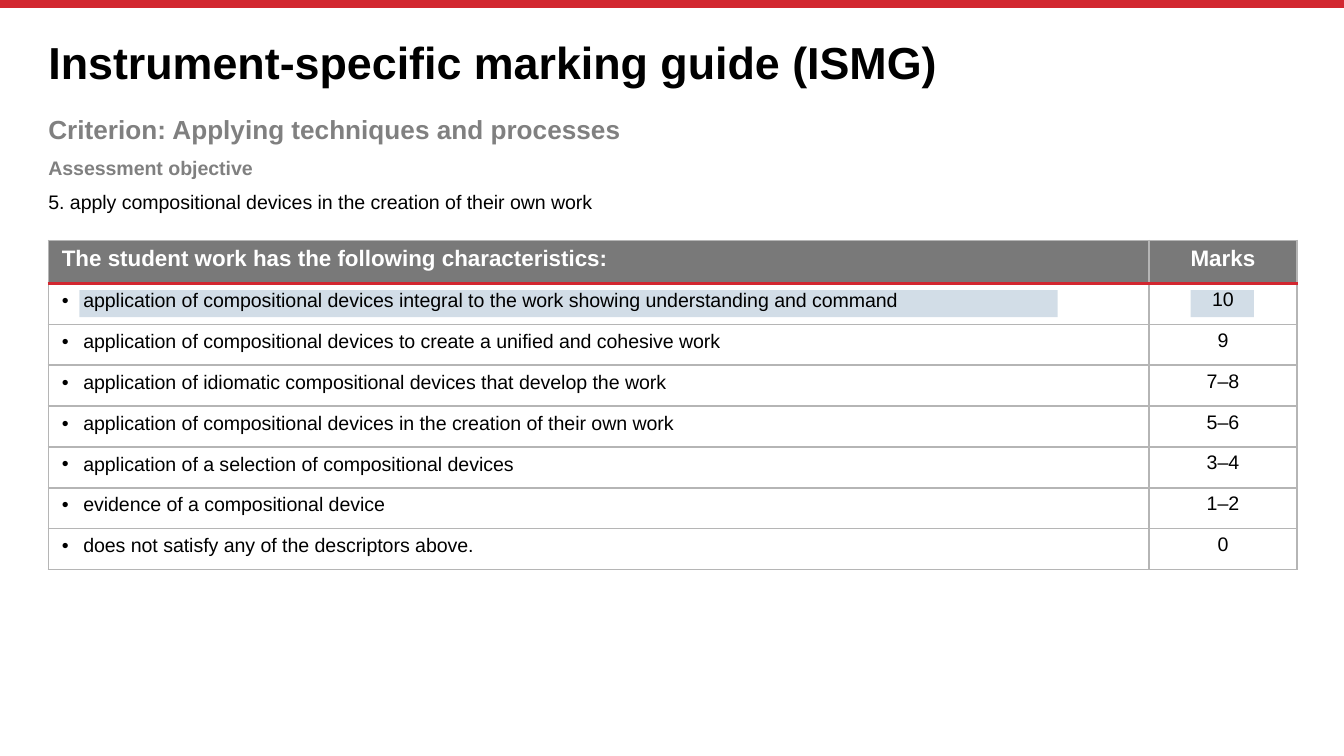
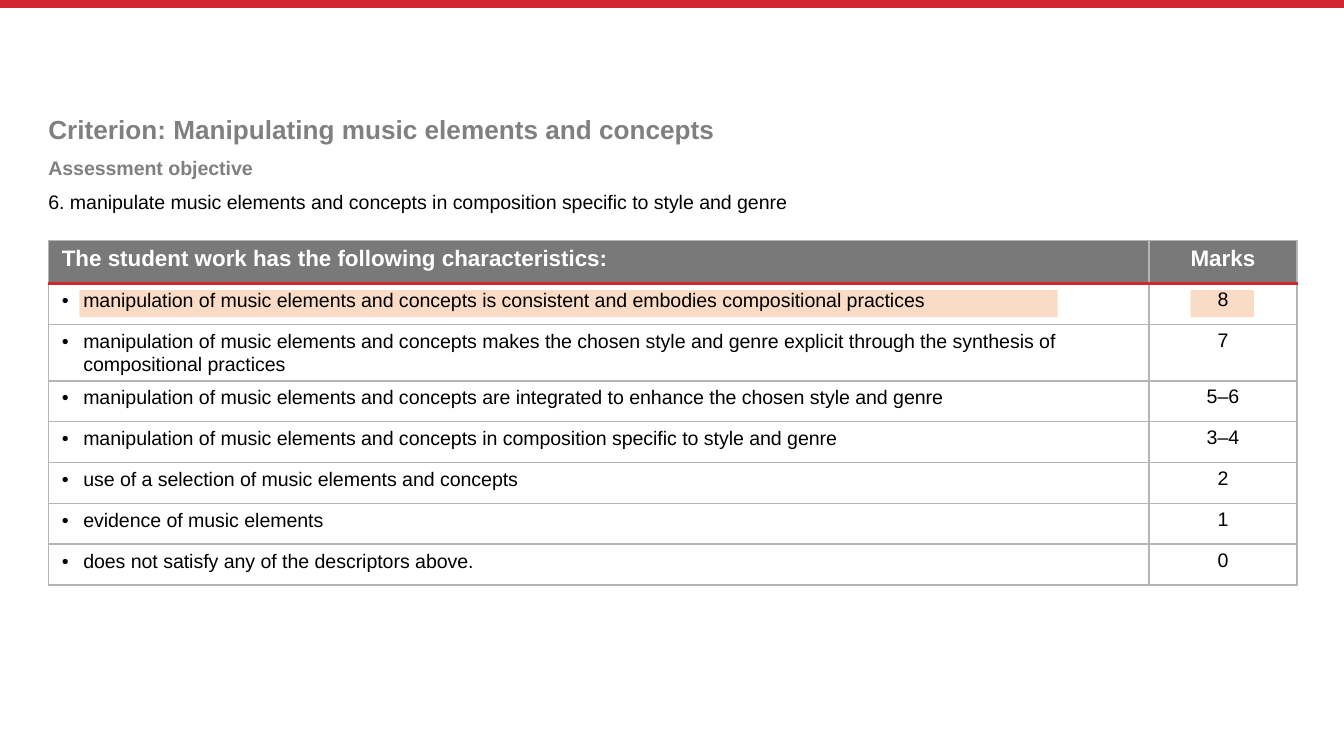
from lxml.etree import SubElement
from pptx import Presentation
from pptx.dml.color import RGBColor
from pptx.enum.shapes import MSO_CONNECTOR, MSO_SHAPE
from pptx.enum.text import MSO_ANCHOR, MSO_AUTO_SIZE, PP_ALIGN
from pptx.oxml.ns import qn
from pptx.util import Inches, Pt

COLOURS = {
    "red": "D22730",
    "blue": "21578A",
    "orange": "ED7A23",
    "black": "000000",
    "white": "FFFFFF",
    "heading": "808080",
    "header": "797979",
    "border": "B5B5B5",
}
FONT = "Arial"
PAGE_WIDTH = 10
PAGE_HEIGHT = PAGE_WIDTH * 9 / 16
LEFT, WIDTH = 0.36, 9.29
MARKS_WIDTH = 1.1
HEADER_HEIGHT = 0.32
ROW_HEIGHT = (2.45 - HEADER_HEIGHT) / 7
HANGING = 0.16
TABLE_HEADER = ("The student work has the following characteristics:", "Marks")

GUIDES = [
    {
        "title": "Instrument-specific marking guide (ISMG)",
        "criterion": "Criterion: Applying techniques and processes",
        "objective": "5. apply compositional devices in the creation of their own work",
        "highlight": ("blue", 20),
        "rows": [
            ("application of compositional devices integral to the work showing understanding and command", "10"),
            ("application of compositional devices to create a unified and cohesive work", "9"),
            ("application of idiomatic compositional devices that develop the work", "7–8"),
            ("application of compositional devices in the creation of their own work", "5–6"),
            ("application of a selection of compositional devices", "3–4"),
            ("evidence of a compositional device", "1–2"),
            ("does not satisfy any of the descriptors above.", "0"),
        ],
    },
    {
        "title": None,
        "criterion": "Criterion: Manipulating music elements and concepts",
        "objective": "6. manipulate music elements and concepts in composition specific to style and genre",
        "highlight": ("orange", 26),
        "rows": [
            ("manipulation of music elements and concepts is consistent and embodies compositional practices", "8"),
            ("manipulation of music elements and concepts makes the chosen style and genre explicit "
             "through the synthesis of compositional practices", "7"),
            ("manipulation of music elements and concepts are integrated to enhance the chosen style and genre", "5–6"),
            ("manipulation of music elements and concepts in composition specific to style and genre", "3–4"),
            ("use of a selection of music elements and concepts", "2"),
            ("evidence of music elements", "1"),
            ("does not satisfy any of the descriptors above.", "0"),
        ],
    },
]


def colour(name):
    return RGBColor.from_string(COLOURS[name])


class GuideDeck:
    def __init__(self):
        self.deck = Presentation()
        self.deck.slide_width = Inches(PAGE_WIDTH)
        self.deck.slide_height = Inches(PAGE_HEIGHT)
        self.page = None

    def add_page(self):
        self.page = self.deck.slides.add_slide(self.deck.slide_layouts[1])

    def master_band(self):
        band = self.page.shapes.add_connector(
            MSO_CONNECTOR.STRAIGHT, 0, Inches(0.03), Inches(PAGE_WIDTH), Inches(0.03))
        band.line.color.rgb = colour("red")
        band.line.width = Pt(4.2)
        SubElement(band.element.spPr, qn("a:effectLst"))
        self.deck.slide_master.shapes.element.append(band.element)

    def format_runs(self, paragraph, size, tone, bold=False):
        for span in paragraph.runs:
            span.font.name = FONT
            span.font.size = Pt(size)
            span.font.bold = bold
            span.font.color.rgb = colour(tone)

    def place(self, box, top, height):
        box.left, box.top = Inches(LEFT), Inches(top)
        box.width, box.height = Inches(WIDTH), Inches(height)
        frame = box.text_frame
        frame.margin_left = frame.margin_right = Inches(0)
        frame.margin_top = frame.margin_bottom = Inches(0)
        frame.word_wrap = True
        frame.auto_size = MSO_AUTO_SIZE.NONE
        frame.vertical_anchor = MSO_ANCHOR.TOP
        return frame

    def title(self, text):
        box = self.page.shapes.title
        if text is None:
            box.element.getparent().remove(box.element)
            return
        frame = self.place(box, 0.3, 0.39)
        frame.text = text
        para = frame.paragraphs[0]
        para.alignment = PP_ALIGN.LEFT
        para.line_spacing = 0.9
        self.format_runs(para, 24, "black", True)

    def body(self, criterion, objective):
        frame = self.place(self.page.placeholders[1], 0.84, 1.1)
        lines = [
            (criterion, 14, "heading", True),
            ("Assessment objective", 10.5, "heading", True),
            (objective, 10.5, "black", False),
        ]
        for index, (text, size, tone, bold) in enumerate(lines):
            para = frame.add_paragraph() if index else frame.paragraphs[0]
            para.text = text
            properties = para._p.get_or_add_pPr()
            properties.set("marL", "0")
            properties.set("indent", "0")
            SubElement(properties, qn("a:buNone"))
            para.space_before = Pt(6 if index else 0)
            self.format_runs(para, size, tone, bold)

    def highlight(self, left, width, tone, opacity):
        box = self.page.shapes.add_shape(
            MSO_SHAPE.RECTANGLE, Inches(left), Inches(2.16), Inches(width), Inches(0.2))
        box.shadow.inherit = False
        box.line.fill.background()
        box.fill.solid()
        box.fill.fore_color.rgb = colour(tone)
        shade = box.element.spPr.find(".//" + qn("a:srgbClr"))
        SubElement(shade, qn("a:alpha"), val=str(opacity * 1000))

    def borders(self, cell, row):
        red_side = {0: "lnB", 1: "lnT"}.get(row)
        properties = cell._tc.get_or_add_tcPr()
        for side in ("lnL", "lnR", "lnT", "lnB"):
            tone, width = ("red", 1.5) if side == red_side else ("border", 1)
            edge = SubElement(properties, qn("a:" + side), w=str(Pt(width)))
            fill = SubElement(edge, qn("a:solidFill"))
            SubElement(fill, qn("a:srgbClr"), val=COLOURS[tone])

    def bullet(self, para):
        properties = para._p.get_or_add_pPr()
        properties.set("marL", str(Inches(HANGING)))
        properties.set("indent", str(-Inches(HANGING)))
        SubElement(properties, qn("a:buFont"), typeface=FONT)
        SubElement(properties, qn("a:buChar"), char="•")
        tabs = SubElement(properties, qn("a:tabLst"))
        SubElement(tabs, qn("a:tab"), pos=str(Inches(HANGING)), algn="l")
        para.line_spacing = 1.05
        para.space_after = Pt(2)

    def cell(self, cell, row, column, text):
        self.borders(cell, row)
        cell.margin_left = cell.margin_right = Inches(0.1)
        cell.margin_top = cell.margin_bottom = Inches(0.04)
        cell.vertical_anchor = MSO_ANCHOR.TOP
        cell.text_frame.text = text
        para = cell.text_frame.paragraphs[0]
        if column:
            para.alignment = PP_ALIGN.CENTER
        elif row:
            self.bullet(para)
        if row:
            cell.fill.background()
            self.format_runs(para, 10.5, "black")
        else:
            cell.fill.solid()
            cell.fill.fore_color.rgb = colour("header")
            self.format_runs(para, 12, "white", True)

    def table(self, rows):
        content = [TABLE_HEADER, *rows]
        height = HEADER_HEIGHT + ROW_HEIGHT * len(rows)
        table = self.page.shapes.add_table(
            len(content), 2, Inches(LEFT), Inches(1.79), Inches(WIDTH), Inches(height)).table
        table.first_row = False
        table.horz_banding = False
        table.columns[0].width = Inches(WIDTH - MARKS_WIDTH)
        table.columns[1].width = Inches(MARKS_WIDTH)
        for row, texts in enumerate(content):
            table.rows[row].height = Inches(ROW_HEIGHT if row else HEADER_HEIGHT)
            for column, text in enumerate(texts):
                self.cell(table.cell(row, column), row, column, text)


def main():
    style = GuideDeck()
    for number, guide in enumerate(GUIDES):
        style.add_page()
        if number == 0:
            style.master_band()
        style.title(guide["title"])
        style.body(guide["criterion"], guide["objective"])
        for left, width in ((8.86, 0.47), (0.59, 7.28)):
            style.highlight(left, width, *guide["highlight"])
        style.table(guide["rows"])
    style.deck.save("out.pptx")


if __name__ == "__main__":
    main()
